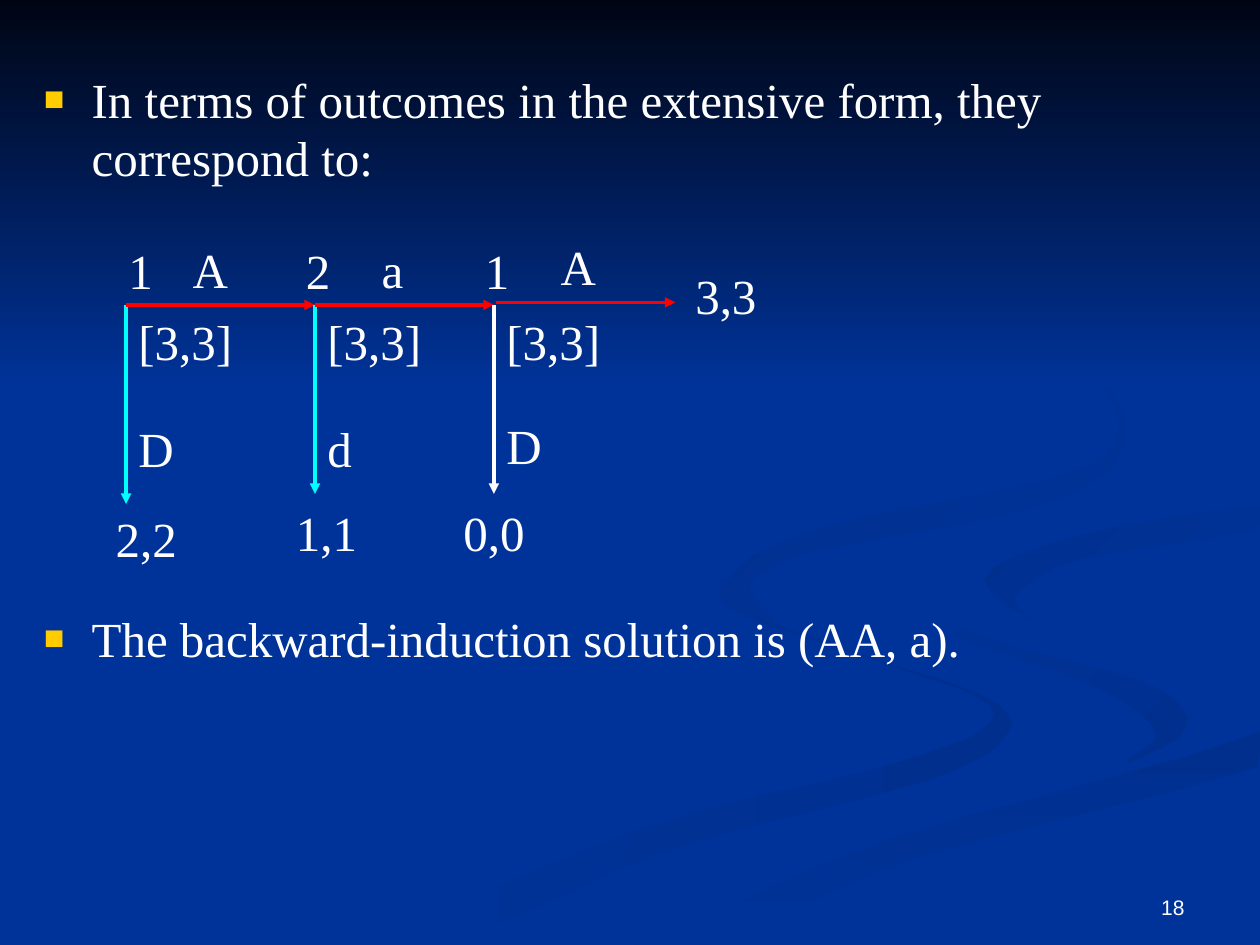
from lxml import etree
from pptx import Presentation, util as u
from pptx.dml.color import RGBColor
from pptx.enum import shapes, text
from pptx.oxml.ns import qn

THEME = {
    "back": "003399", "dusk": "002F8E", "night": "000514",
    "ink": "FFFFFF", "gold": "FFCC00", "red": "FF0000", "cyan": "00FFFF",
    "line": 2,
    "body": {"name": "Times New Roman", "size": u.Pt(28)},
    "foot": {"name": "Arial", "size": u.Pt(12)},
}
WIDE, HIGH = 10, 7.5

# Ribbons: start colour, end colour, angle, outline in hundredths of an inch
RIBBONS = [
    ("back", "dusk", 0, [
        (781, 553), (682, 519), (594, 485), (575, 459), (581, 484), (679, 519),
        (776, 553), (780, 579), (699, 609), (499, 661), (300, 749), (361, 749),
        (532, 674), (740, 618), (800, 581)]),
    ("back", "dusk", 45, [
        (943, 570), (905, 540), (774, 503), (724, 464), (746, 500), (868, 544),
        (918, 581), (894, 605), (937, 586)]),
    ("dusk", "back", 90, [
        (503, 749), (571, 749), (722, 682), (998, 609), (998, 581), (764, 647),
        (569, 719)]),
    ("back", "back", 0, [
        (725, 464), (775, 503), (905, 540), (943, 570), (902, 603), (743, 643),
        (477, 749), (519, 747), (696, 669), (999, 581), (999, 538), (848, 503),
        (781, 463), (835, 430), (999, 402), (999, 387), (808, 417)]),
    ("dusk", "back", 45, [
        (781, 460), (826, 496), (805, 474), (859, 443), (998, 420), (998, 402),
        (849, 427)]),
    ("dusk", "back", 45, [
        (683, 430), (841, 396), (894, 344), (854, 283), (762, 233), (855, 285),
        (888, 341), (842, 378), (649, 420), (577, 462), (622, 500), (594, 465),
        (635, 440)]),
]

# Game tree: one row for each node, from left to right
TOP = 2.42
FIELDS = ("x", "foot", "stem", "player", "near", "across", "rise",
          "down", "drop", "payoff", "left", "low")
NODES = [dict(zip(FIELDS, row)) for row in (
    (1, 4, "cyan", "1", 0.92, "A", 1.85, "D", 3.27, "2,2", 0.82, 3.99),
    (2.5, 3.92, "cyan", "2", 2.33, "a", 1.85, "d", 3.27, "1,1", 2.25, 3.94),
    (3.92, 3.92, "ink", "1", 3.75, "A", 1.83, "D", 3.25, "0,0", 3.58, 3.94),
)]
SPANS = [((1, TOP), (2.5, TOP)), ((2.5, TOP), (3.92, TOP)),
         ((3.94, 2.4), (5.36, 2.4))]
WIDTHS = {"A": 0.48, "D": 0.48, "a": 0.37, "[3,3]": 0.95}

POINTS = [
    ("In terms of outcomes in the extensive form, they correspond to:", 0.5, 1.1),
    ("The backward-induction solution is (AA, a).", 4.78, 0.6),
]


def shade(name):
    return RGBColor.from_string(THEME[name])


def tint(fill, start, end, angle):
    """Fill plainly, or with a gradient turned clockwise by angle."""
    if start == end:
        fill.solid()
        fill.fore_color.rgb = shade(start)
        return
    fill.gradient()
    fill.gradient_angle = -angle % 360
    for stop, hue in zip(fill.gradient_stops, (start, end)):
        stop.color.rgb = shade(hue)


def finish(shape, start, end, angle):
    shape.shadow.inherit = False
    shape.line.fill.background()
    tint(shape.fill, start, end, angle)


def blend(a, b, c, d, t):
    """Catmull-Rom value between b and c."""
    return b + t / 2 * (c - a + t * (2 * a - 5 * b + 4 * c - d
                                     + t * (3 * (b - c) + d - a)))


def smooth(points, steps=4):
    """Round a closed outline, kept within the slide."""
    count = len(points)
    curve = []
    for i in range(count):
        near = [points[(i + k - 1) % count] for k in range(4)]
        for step in range(steps):
            x, y = (blend(*axis, step / steps) for axis in zip(*near))
            curve.append((min(x, WIDE * 100), min(y, HIGH * 100)))
    return curve


def ribbon(slide, start, end, angle, points):
    curve = smooth(points)
    pen = slide.shapes.build_freeform(*curve[0], scale=u.Inches(0.01))
    pen.add_line_segments(curve[1:], close=True)
    finish(pen.convert_to_shape(), start, end, angle)


def arrow(slide, tail, head, hue):
    ends = [u.Inches(v) for v in tail + head]
    link = slide.shapes.add_connector(shapes.MSO_CONNECTOR.STRAIGHT, *ends)
    link.line.width = u.Pt(THEME["line"])
    link.line.color.rgb = shade(hue)
    props = link._element.spPr
    etree.SubElement(props.find(qn("a:ln")), qn("a:tailEnd"), type="triangle")
    etree.SubElement(props, qn("a:effectLst"))


def mark(para):
    """Give the paragraph a square bullet and a hanging indent."""
    props = para._p.get_or_add_pPr()
    props.set("marL", str(u.Inches(0.38)))
    props.set("indent", str(u.Inches(-0.38)))
    hue = etree.SubElement(props, qn("a:buClr"))
    etree.SubElement(hue, qn("a:srgbClr"), val=THEME["gold"])
    etree.SubElement(props, qn("a:buSzPct"), val="70000")
    etree.SubElement(props, qn("a:buFont"), typeface="Arial")
    etree.SubElement(props, qn("a:buChar"), char="■")


def write(slide, words, box, style, wrap=True, bullet=False):
    """Add a text box and return its frame."""
    frame = slide.shapes.add_textbox(*[u.Inches(v) for v in box]).text_frame
    frame.word_wrap = wrap
    para = frame.paragraphs[0]
    if bullet:
        mark(para)
    run = para.add_run()
    run.text = words
    for key, val in THEME[style].items():
        setattr(run.font, key, val)
    run.font.color.rgb = shade("ink")
    return frame


def label(slide, words, left, top):
    width = WIDTHS.get(words, 0.4 if len(words) == 1 else 0.69)
    frame = write(slide, words, (left, top, width, 0.57), "body", wrap=False)
    frame.auto_size = text.MSO_AUTO_SIZE.SHAPE_TO_FIT_TEXT


def branch(slide, node, span):
    """Draw a node's two moves with their labels."""
    x = node["x"]
    arrow(slide, (x, TOP), (x, node["foot"]), node["stem"])
    arrow(slide, *span, "red")
    label(slide, node["player"], node["near"], 1.86)
    label(slide, node["across"], x + 0.43, node["rise"])
    label(slide, "[3,3]", x, TOP)
    label(slide, node["down"], x, node["drop"])
    label(slide, node["payoff"], node["left"], node["low"])


def main():
    deck = Presentation()
    deck.slide_width, deck.slide_height = u.Inches(WIDE), u.Inches(HIGH)
    slide = deck.slides.add_slide(deck.slide_layouts[6])

    # Backdrop
    tint(slide.background.fill, "back", "back", 0)
    for row in RIBBONS:
        ribbon(slide, *row)
    sky = slide.shapes.add_shape(shapes.MSO_SHAPE.RECTANGLE, 0, 0,
                                 u.Inches(WIDE), u.Inches(3.08))
    finish(sky, "night", "back", 90)

    # Bullet points
    for words, top, height in POINTS:
        write(slide, words, (0.25, top, 9.67, height), "body", bullet=True)

    # Game tree
    for node, span in zip(NODES, SPANS):
        branch(slide, node, span)
    label(slide, "3,3", 5.42, 2.06)

    # Page number
    frame = write(slide, "18", (7.17, 6.83, 2.33, 0.52), "foot")
    frame.vertical_anchor = text.MSO_ANCHOR.BOTTOM
    frame.paragraphs[0].alignment = text.PP_ALIGN.RIGHT

    deck.save("out.pptx")


if __name__ == "__main__":
    main()
